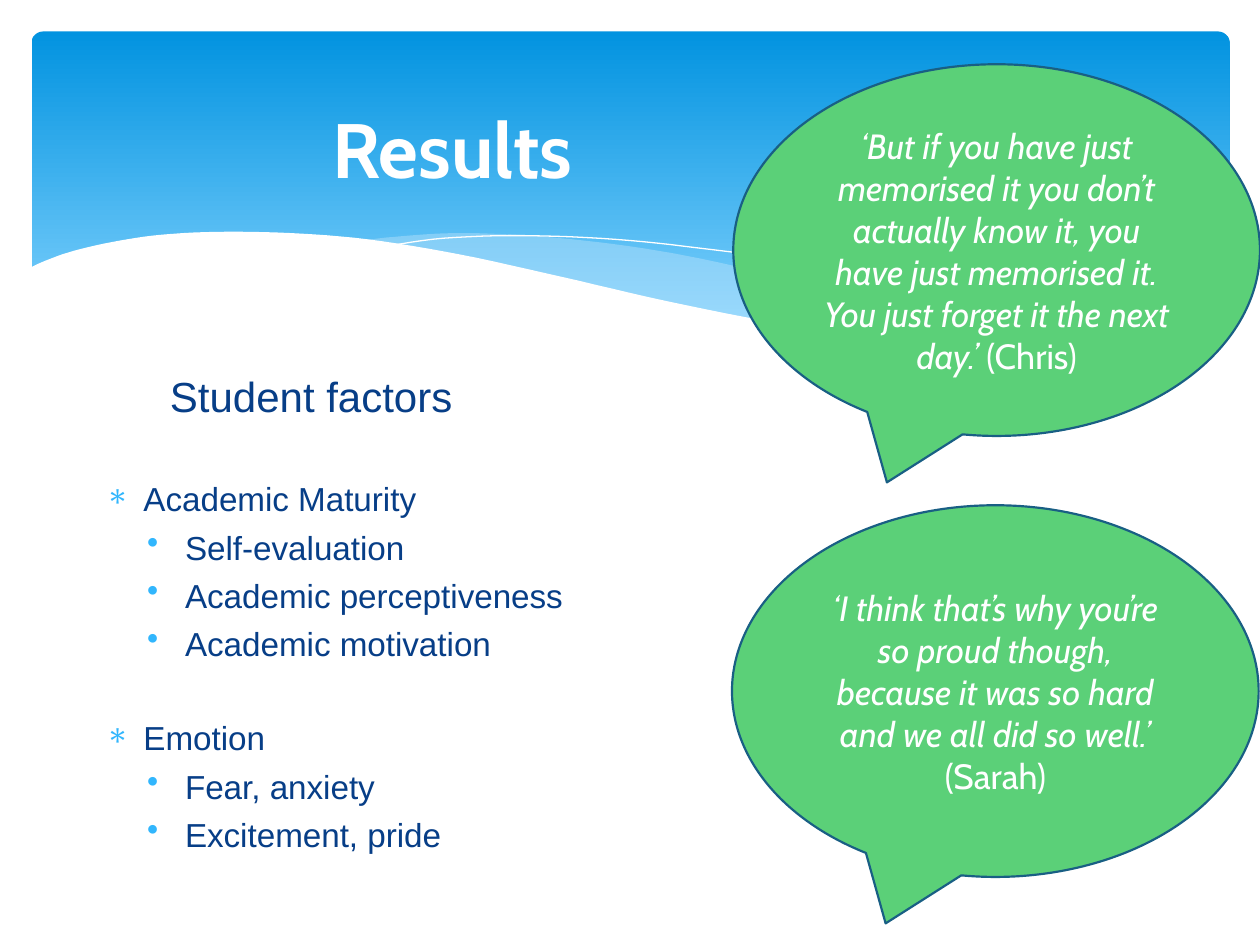
from collections import namedtuple

from lxml.etree import SubElement
from pptx import Presentation
from pptx.dml.color import RGBColor
from pptx.enum.shapes import MSO_SHAPE
from pptx.enum.text import MSO_ANCHOR, PP_ALIGN
from pptx.oxml.ns import qn
from pptx.util import Inches, Pt

COLUMNS, ROWS = 100, 75
CELL = Inches(0.1)
FREEFORM_STEPS = 100  # freeform units per grid cell

WHITE = RGBColor(0xFF, 0xFF, 0xFF)
NAVY = RGBColor(0x07, 0x3E, 0x87)
BULLET_BLUE = RGBColor(0x31, 0xB6, 0xFD)
BANNER_TOP = RGBColor(0x02, 0x93, 0xE0)
BANNER_BOTTOM = RGBColor(0x83, 0xD3, 0xFE)
PALE_BLUE = RGBColor(0xC6, 0xE7, 0xFC)
BUBBLE_GREEN = RGBColor(0x5B, 0xD0, 0x78)
BUBBLE_EDGE = RGBColor(0x19, 0x5F, 0x84)

Box = namedtuple("Box", "left top width height")  # in grid cells

BANNER = Box(2.5, 2.5, 95.1, 27)
TITLE = Box(-9.1, 4.9, 90, 13.7)
HEADING = Box(3.8, 27.9, 41.8, 7)
FACTORS = Box(7.4, 37.5, 41.8, 29.5)
BUBBLES = [
    (Box(58.1, 40.1, 41.8, 29.5),
     "‘I think that’s why you’re so proud though, because it was so hard "
     "and we all did so well.’ ", "(Sarah)"),
    (Box(58.2, 5.1, 41.8, 29.5),
     "‘But if you have just memorised it you don’t actually know it, you have "
     "just memorised it. You just forget it the next day.’ ", "(Chris)"),
]
STUDENT_FACTORS = {
    "Academic Maturity": ["Self-evaluation", "Academic perceptiveness",
                          "Academic motivation"],
    "Emotion": ["Fear, anxiety", "Excitement, pride"],
}

# Each wave is a list of smooth edges; an edge lists the points it runs through.
RIGHT_WAVE = [
    [(97.6, 20), (92.1, 21), (86.1, 22.3), (77.9, 24.2), (66.1, 26.5)],
    [(66.1, 26.5), (73.2, 27.4), (80.3, 27.8), (87.2, 27.4), (92.8, 26.3), (97.6, 24.7)],
]
MIDDLE_WAVE = [
    [(89.3, 27.3), (80.7, 26), (70.6, 24), (62.9, 22.2), (55.5, 20.5), (48.9, 19.4),
     (42, 18.7), (36.1, 18.5), (31.3, 18.8), (28.6, 19.1)],
    [(28.6, 19.1), (36.2, 20.3), (44.9, 22.2), (56.6, 24.8), (66.5, 26.6), (73.6, 27.5),
     (80.7, 27.8), (85.7, 27.7), (89.3, 27.3)],
]
LONG_CREST = [[(30.9, 19.5), (35.3, 18.9), (41.6, 18.7), (48.9, 19), (55.6, 19.7),
               (63.6, 20.8), (72.7, 22.6), (83.1, 25.1), (90.7, 27.2)]]
RIGHT_CREST = [[(61.3, 25.7), (69.5, 23.5), (77.6, 21.6), (86.6, 19.9),
                (92.4, 19), (97.5, 18.5)]]
WHITE_WAVE = [
    [(97.7, 24.6), (93, 26.2), (87.5, 27.2), (80.9, 27.7), (72.6, 27.2), (62.6, 25.8),
     (52.9, 23.9), (44.7, 22), (36.5, 20.2), (29.2, 19), (23, 18.5), (17.7, 18.4),
     (13.2, 18.6), (9.5, 19.1), (5.9, 19.9), (3.6, 20.7), (2.3, 21.3)],
    [(2.3, 21.3), (2.3, 32.9)],
    [(2.3, 32.9), (97.7, 32.9)],
]


def cells(count):
    return round(count * CELL)


def place(shape, box):
    shape.left, shape.top, shape.width, shape.height = map(cells, box)


def smooth(points, samples=6):
    """Return points along a Catmull-Rom curve through the given points."""
    padded = [points[0], *points, points[-1]]
    curve = [points[0]]
    for a, b, c, d in zip(padded, padded[1:], padded[2:], padded[3:]):
        for step in range(1, samples + 1):
            t = step / samples
            curve.append(tuple(
                q + t / 2 * (r - p + t * (2 * p - 5 * q + 4 * r - s
                                          + t * (3 * (q - r) + s - p)))
                for p, q, r, s in zip(a, b, c, d)))
    return curve


def add_wave(slide, edges, color, opacity=100, closed=True):
    points = [tuple(value * FREEFORM_STEPS for value in point)
              for edge in edges for point in smooth(edge)]
    builder = slide.shapes.build_freeform(*points[0], scale=CELL / FREEFORM_STEPS)
    builder.add_line_segments(points[1:], close=closed)
    wave = builder.convert_to_shape()
    wave.shadow.inherit = False
    if closed:
        wave.line.fill.background()
        wave.fill.solid()
        wave.fill.fore_color.rgb = color
        color_element = wave.fill._xPr.find(qn("a:solidFill"))[0]
        SubElement(color_element, qn("a:alpha"), val=str(opacity * 1000))
    else:
        wave.fill.background()
        wave.line.color.rgb = color
        wave.line.width = Pt(0)


def add_banner(slide, box):
    banner = slide.shapes.add_shape(MSO_SHAPE.ROUNDED_RECTANGLE, *map(cells, box))
    banner.adjustments[0] = 0.034
    banner.shadow.inherit = False
    banner.line.fill.background()
    banner.fill.gradient()
    banner.fill.gradient_angle = 270
    stops = zip(banner.fill.gradient_stops, (0, 0.9), (BANNER_TOP, BANNER_BOTTOM))
    for stop, position, color in stops:
        stop.position = position
        stop.color.rgb = color
    add_wave(slide, RIGHT_WAVE, PALE_BLUE, 29)
    add_wave(slide, MIDDLE_WAVE, PALE_BLUE, 40)
    add_wave(slide, LONG_CREST, WHITE, closed=False)
    add_wave(slide, RIGHT_CREST, WHITE, closed=False)
    add_wave(slide, WHITE_WAVE, WHITE)


def format_runs(paragraph, font_name, size, color, bold=False):
    for run in paragraph.runs:
        run.font.name = font_name
        run.font.size = Pt(size)
        run.font.color.rgb = color
        run.font.bold = bold


def fill_title(slide, box):
    title = slide.shapes.title
    place(title, box)
    title.text_frame.text = "Results"
    title.text_frame.vertical_anchor = MSO_ANCHOR.MIDDLE
    paragraph = title.text_frame.paragraphs[0]
    paragraph.alignment = PP_ALIGN.CENTER
    format_runs(paragraph, "Cabin", 44, WHITE, bold=True)
    # Bring the title in front of the banner.
    slide.shapes._spTree.append(title._element)


def add_text_frame(slide, box):
    frame = slide.shapes.add_textbox(*map(cells, box)).text_frame
    frame.word_wrap = True
    return frame


def add_heading(slide, box):
    frame = add_text_frame(slide, box)
    frame.vertical_anchor = MSO_ANCHOR.MIDDLE
    frame.text = "Student factors"
    paragraph = frame.paragraphs[0]
    paragraph.alignment = PP_ALIGN.CENTER
    paragraph.space_before = Pt(5)
    format_runs(paragraph, "Arial", 24, NAVY)


def set_bullet(paragraph, character, margin):
    properties = paragraph._p.get_or_add_pPr()
    properties.set("marL", str(Inches(margin)))
    properties.set("indent", str(Inches(-0.3)))
    color = SubElement(properties, qn("a:buClr"))
    SubElement(color, qn("a:srgbClr"), val=str(BULLET_BLUE))
    SubElement(properties, qn("a:buChar"), char=character)


def add_factors(slide, box):
    frame = add_text_frame(slide, box)
    lines = [(text, level) for factor, parts in STUDENT_FACTORS.items()
             for text, level in [(factor, 0), *((part, 1) for part in parts)]]
    for index, (text, level) in enumerate(lines):
        paragraph = frame.add_paragraph() if index else frame.paragraphs[0]
        paragraph.text = text
        paragraph.level = level
        starts_group = index and level == 0
        paragraph.space_before = Pt(31.3 if starts_group else 4.7)
        set_bullet(paragraph, "•" if level else "∗", 0.63 if level else 0.3)
        format_runs(paragraph, "Arial", 19, NAVY)


def add_bubble(slide, box, quote, speaker):
    bubble = slide.shapes.add_shape(MSO_SHAPE.OVAL_CALLOUT, *map(cells, box))
    bubble.shadow.inherit = False
    bubble.fill.solid()
    bubble.fill.fore_color.rgb = BUBBLE_GREEN
    bubble.line.color.rgb = BUBBLE_EDGE
    bubble.line.width = Pt(1.25)
    frame = bubble.text_frame
    frame.word_wrap = True
    frame.vertical_anchor = MSO_ANCHOR.MIDDLE
    frame.text = quote
    paragraph = frame.paragraphs[0]
    paragraph.alignment = PP_ALIGN.CENTER
    paragraph.space_before = Pt(4)
    paragraph.runs[0].font.italic = True
    paragraph.add_run().text = speaker
    format_runs(paragraph, "Cabin", 20, WHITE)


def main():
    presentation = Presentation()
    presentation.slide_width = cells(COLUMNS)
    presentation.slide_height = cells(ROWS)
    slide = presentation.slides.add_slide(presentation.slide_layouts[5])
    add_banner(slide, BANNER)
    fill_title(slide, TITLE)
    add_heading(slide, HEADING)
    add_factors(slide, FACTORS)
    for box, quote, speaker in BUBBLES:
        add_bubble(slide, box, quote, speaker)
    presentation.save("out.pptx")


if __name__ == "__main__":
    main()
